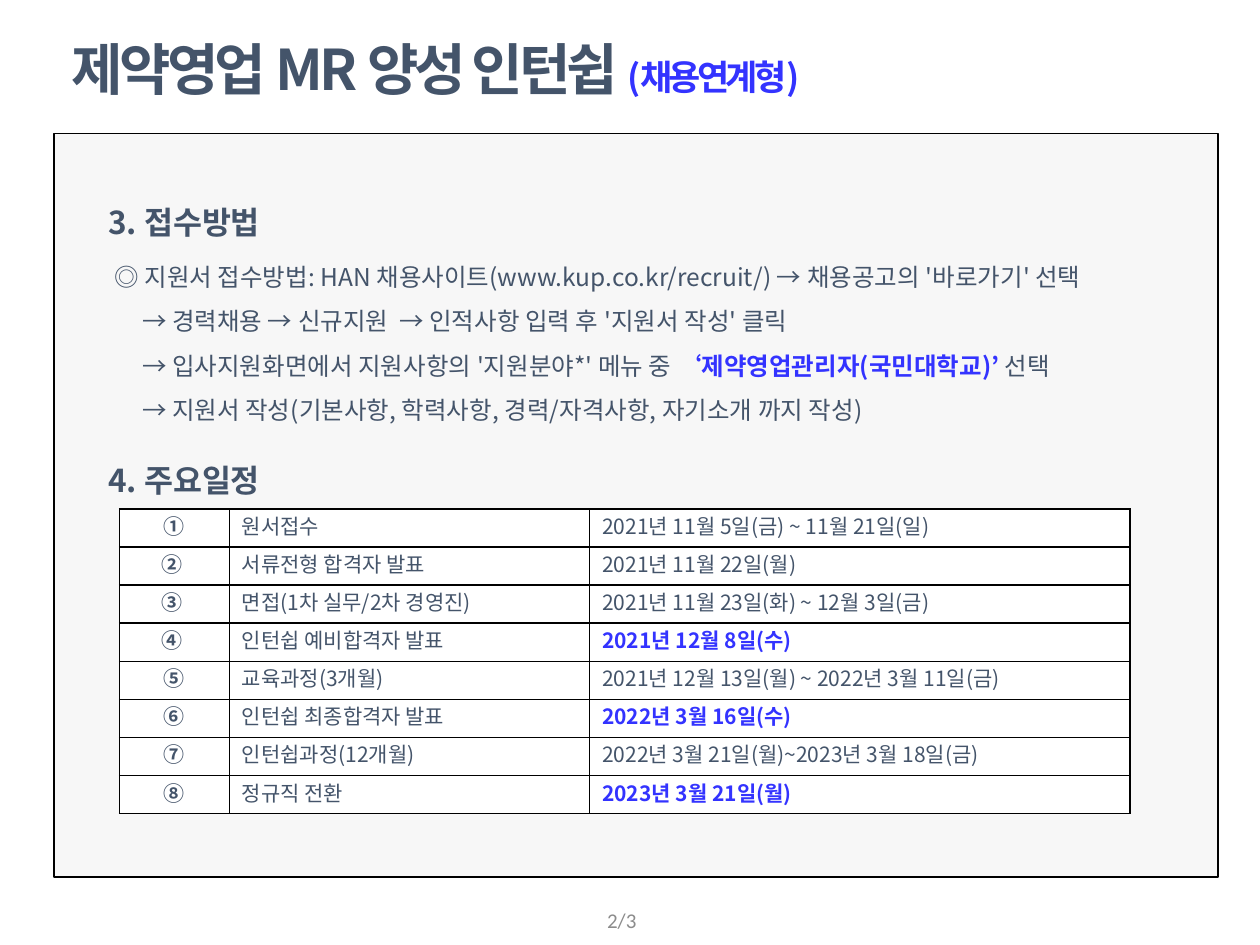
"""Build the internship slide with application steps and the main schedule."""
import pptx
import pptx.dml.color
import pptx.enum.shapes
import pptx.enum.text
import pptx.oxml
import pptx.oxml.ns
import pptx.util

Inches = pptx.util.Inches
ALIGN = pptx.enum.text.PP_ALIGN
ANCHOR = pptx.enum.text.MSO_ANCHOR

THEME = {
    "font": "Noto Sans CJK KR", "number_font": "Calibri",
    "ink": "44546A", "accent": "3333FF", "muted": "8C8C8C",
    "panel": "F7F7F7", "cell": "FFFFFF", "line": "000000",
    "title": 32, "title_gap": 24, "subtitle": 20,
    "heading": 18, "body": 14, "small": 12, "leading": 1.21,
}
EMPHASIS = {"color": "accent", "bold": True}
TITLE = [
    ("제약영업 MR", {"size": "title"}),
    (" ", {"size": "title_gap"}),
    ("양성 인턴쉽 ", {"size": "title"}),
    ("(채용연계형)", {"size": "subtitle", "color": "accent"}),
]
HEADINGS = [("3. 접수방법", 1.61), ("4. 주요일정", 3.66)]
STEPS = [
    [("◎ 지원서 접수방법: HAN 채용사이트(www.kup.co.kr/recruit/) → 채용공고의 '바로가기' 선택", {})],
    [("→ 경력채용 → 신규지원  → 인적사항 입력 후 '지원서 작성' 클릭", {})],
    [("→ 입사지원화면에서 지원사항의 '지원분야*' 메뉴 중 ", {}),
     ("‘제약영업관리자(국민대학교)’ ", EMPHASIS), ("선택", {})],
    [("→ 지원서 작성(기본사항, 학력사항, 경력/자격사항, 자기소개 까지 작성)", {})],
]
SCHEDULE = [
    ("①", "원서접수", "2021년 11월 5일(금) ~ 11월 21일(일)", False),
    ("② ", "서류전형 합격자 발표", "2021년 11월 22일(월)", False),
    ("③ ", "면접(1차 실무/2차 경영진)", "2021년 11월 23일(화) ~ 12월 3일(금)", False),
    ("④ ", "인턴쉽 예비합격자 발표", "2021년 12월 8일(수)", True),
    ("⑤", "교육과정(3개월)", "2021년 12월 13일(월) ~ 2022년 3월 11일(금)", False),
    ("⑥", "인턴쉽 최종합격자 발표", "2022년 3월 16일(수)", True),
    ("⑦", "인턴쉽과정(12개월)", "2022년 3월 21일(월)~2023년 3월 18일(금)", False),
    ("⑧", "정규직 전환", "2023년 3월 21일(월)", True),
]
COLUMNS = [0.87, 2.86, 4.29]
ROW_HEIGHT = 0.3


def rgb(name):
    return pptx.dml.color.RGBColor.from_string(THEME[name])


def add_span(para, text, size="body", color="ink", bold=False, font="font", spacing=0):
    span = para.add_run()
    span.text = text
    span.font.size = pptx.util.Pt(THEME[size])
    span.font.bold = bold
    span.font.color.rgb = rgb(color)
    span.font.name = THEME[font]
    properties = span.font._element
    properties.set("spc", str(spacing))
    east_asian = pptx.oxml.parse_xml(
        f'<a:ea {pptx.oxml.ns.nsdecls("a")} typeface="{THEME[font]}"/>')
    properties.append(east_asian)


def set_para(para, size="body", spread=1, align=ALIGN.LEFT, indent=0):
    para.alignment = align
    para.line_spacing = pptx.util.Pt(round(THEME[size] * THEME["leading"] * spread, 1))
    para._p.get_or_add_pPr().set("marL", str(Inches(indent)))


def set_frame(frame, anchor=ANCHOR.TOP):
    frame.word_wrap = True
    frame.auto_size = pptx.enum.text.MSO_AUTO_SIZE.NONE
    frame.vertical_anchor = anchor
    frame.margin_left = frame.margin_right = Inches(0.1)
    frame.margin_top = frame.margin_bottom = 0
    return frame


def add_box(page, left, top, width, height, **options):
    box = page.shapes.add_textbox(Inches(left), Inches(top), Inches(width), Inches(height))
    return set_frame(box.text_frame, **options)


def set_borders(cell):
    for side in ("lnL", "lnR", "lnT", "lnB"):
        border = pptx.oxml.parse_xml(
            f'<a:{side} {pptx.oxml.ns.nsdecls("a")} w="12700"><a:solidFill>'
            f'<a:srgbClr val="{THEME["line"]}"/></a:solidFill></a:{side}>')
        cell._tc.get_or_add_tcPr().append(border)


def add_title(page):
    title = page.shapes.title
    title.left, title.top = Inches(0.47), Inches(0.27)
    title.width, title.height = Inches(9.24), Inches(0.6)
    para = set_frame(title.text_frame).paragraphs[0]
    set_para(para, size="title")
    for text, style in TITLE:
        add_span(para, text, bold=True, spacing=-220, **style)


def add_panel(page):
    panel = page.shapes.add_shape(
        pptx.enum.shapes.MSO_SHAPE.RECTANGLE,
        Inches(0.43), Inches(1.06), Inches(9.24), Inches(5.9))
    panel.shadow.inherit = False
    panel.fill.solid()
    panel.fill.fore_color.rgb = rgb("panel")
    panel.line.color.rgb = rgb("line")
    panel.line.width = pptx.util.Pt(1)


def add_steps(page):
    frame = add_box(page, 0.76, 1.96, 8.61, 1.41)
    for index, spans in enumerate(STEPS):
        para = frame.add_paragraph() if index else frame.paragraphs[0]
        set_para(para, spread=1.5, indent=0.27 if index else 0.05)
        for text, style in spans:
            add_span(para, text, **style)


def add_schedule(page):
    table = page.shapes.add_table(
        len(SCHEDULE), len(COLUMNS), Inches(0.95), Inches(4.04),
        Inches(sum(COLUMNS)), Inches(ROW_HEIGHT * len(SCHEDULE))).table
    table.first_row = table.horz_banding = False
    for column, width in zip(table.columns, COLUMNS):
        column.width = Inches(width)
    for row, (number, stage, date, key) in zip(table.rows, SCHEDULE):
        row.height = Inches(ROW_HEIGHT)
        contents = [(number, {"bold": True}), (stage, {}), (date, EMPHASIS if key else {})]
        for index, (cell, (text, style)) in enumerate(zip(row.cells, contents)):
            set_borders(cell)
            cell.fill.solid()
            cell.fill.fore_color.rgb = rgb("cell")
            cell.vertical_anchor = ANCHOR.MIDDLE
            para = cell.text_frame.paragraphs[0]
            set_para(para, size="small", align=ALIGN.LEFT if index else ALIGN.CENTER)
            add_span(para, text, size="small", **style)


def main():
    deck = pptx.Presentation()
    deck.slide_width, deck.slide_height = Inches(10), Inches(7.5)
    page = deck.slides.add_slide(deck.slide_layouts[5])
    add_title(page)
    add_panel(page)
    for text, top in HEADINGS:
        para = add_box(page, 0.76, top, 5, 0.3).paragraphs[0]
        set_para(para, size="heading")
        add_span(para, text, size="heading", bold=True)
    add_steps(page)
    add_schedule(page)
    para = add_box(page, 3.81, 7.1, 2.25, 0.4, anchor=ANCHOR.MIDDLE).paragraphs[0]
    set_para(para, size="small", align=ALIGN.CENTER)
    add_span(para, "2/3", size="small", color="muted", font="number_font")
    deck.save("out.pptx")


if __name__ == "__main__":
    main()
